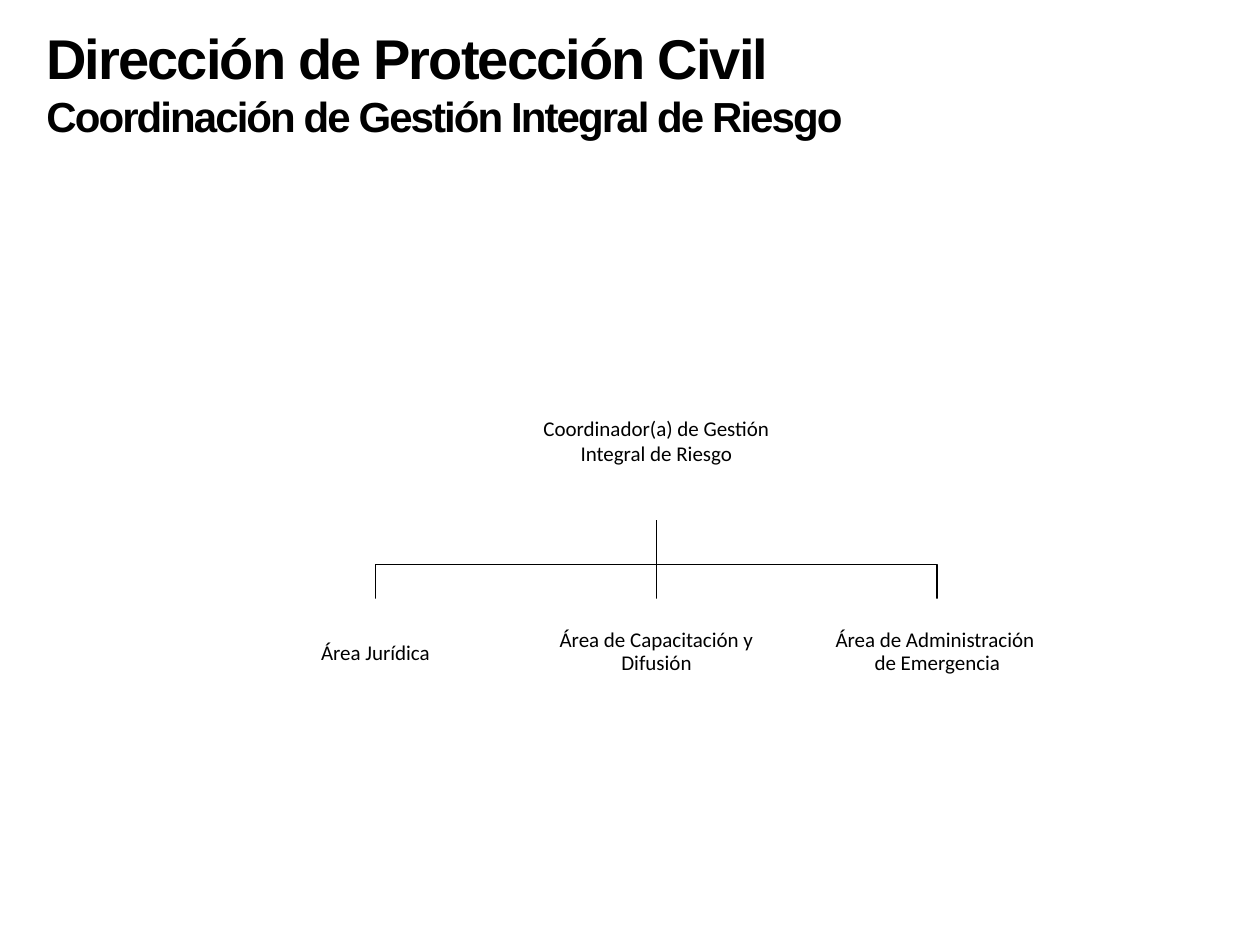
"""Build the organisation chart of the risk management coordination."""
from lxml import etree
from pptx import Presentation
from pptx.dml.color import RGBColor
from pptx.enum.shapes import MSO_CONNECTOR, MSO_SHAPE
from pptx.enum.text import MSO_ANCHOR, PP_ALIGN
from pptx.oxml.ns import qn
from pptx.util import Inches, Pt

BLACK, WHITE = "000000", "FFFFFF"
TITLES = [("Dirección de Protección Civil", 32),
          ("Coordinación de Gestión Integral de Riesgo", 24)]
HEAD = "Coordinador(a) de Gestión Integral de Riesgo"
AREAS = [("Área Jurídica", 1),
         ("Área de Capacitación y Difusión", 0.9),
         ("Área de Administración \vde Emergencia", 0.9)]

CENTER, PITCH = 5.21, 2.23
HEAD_TOP, HEAD_W, HEAD_H = 3.07, 2.13, 1.06
AREA_TOP, AREA_W, AREA_H = 4.75, 1.69, 0.85
HEAD_BOTTOM, BUS_Y = HEAD_TOP + HEAD_H, 4.48


def color(value):
    return RGBColor.from_string(value)


def style(p, size, name, bold=False):
    p.font.size, p.font.name, p.font.bold = Pt(size), name, bold
    p.font.color.rgb = color(BLACK)


def add_title(s):
    tf = s.shapes.add_textbox(Inches(0.27), Inches(0.13), Inches(7.96), Inches(1.04)).text_frame
    tf.word_wrap = True
    tf.vertical_anchor = MSO_ANCHOR.MIDDLE
    for i, (text, size) in enumerate(TITLES):
        p = tf.add_paragraph() if i else tf.paragraphs[0]
        r = p.add_run()
        r.text = text
        style(p, size, "Arial", True)
        r.font._element.set("spc", "-110")


def add_node(s, text, x, y, w, h, spacing=1, bottom=0.01):
    box = s.shapes.add_shape(MSO_SHAPE.RECTANGLE, Inches(x - w / 2), Inches(y), Inches(w), Inches(h))
    box.shadow.inherit = False
    box.fill.solid()
    box.fill.fore_color.rgb = color(WHITE)
    box.line.fill.background()
    tf = box.text_frame
    tf.word_wrap = True
    tf.vertical_anchor = MSO_ANCHOR.MIDDLE
    tf.margin_left = tf.margin_right = tf.margin_top = Inches(0.01)
    tf.margin_bottom = Inches(bottom)
    p = tf.paragraphs[0]
    p.text = text
    p.alignment, p.line_spacing = PP_ALIGN.CENTER, spacing
    style(p, 12, "Calibri")


def add_branch(s, x):
    if x == CENTER:
        line = s.shapes.add_connector(MSO_CONNECTOR.STRAIGHT, Inches(x), Inches(HEAD_BOTTOM),
                                      Inches(x), Inches(AREA_TOP))
        etree.SubElement(line._element.spPr, qn("a:effectLst"))
    else:
        fb = s.shapes.build_freeform(Inches(CENTER), Inches(HEAD_BOTTOM))
        points = [(CENTER, BUS_Y), (x, BUS_Y), (x, AREA_TOP)]
        fb.add_line_segments([(Inches(a), Inches(b)) for a, b in points], close=False)
        line = fb.convert_to_shape()
        line.shadow.inherit = False
        line.fill.background()
    line.line.color.rgb = color(BLACK)
    line.line.width = Pt(1)


def main():
    prs = Presentation()
    prs.slide_width, prs.slide_height = Inches(10), Inches(7.5)
    s = prs.slides.add_slide(prs.slide_layouts[6])
    add_title(s)
    add_node(s, HEAD, CENTER, HEAD_TOP, HEAD_W, HEAD_H, bottom=0.21)
    for i, (text, spacing) in enumerate(AREAS):
        x = CENTER + (i - 1) * PITCH
        add_branch(s, x)
        add_node(s, text, x, AREA_TOP, AREA_W, AREA_H, spacing)
    prs.save("out.pptx")


if __name__ == "__main__":
    main()
